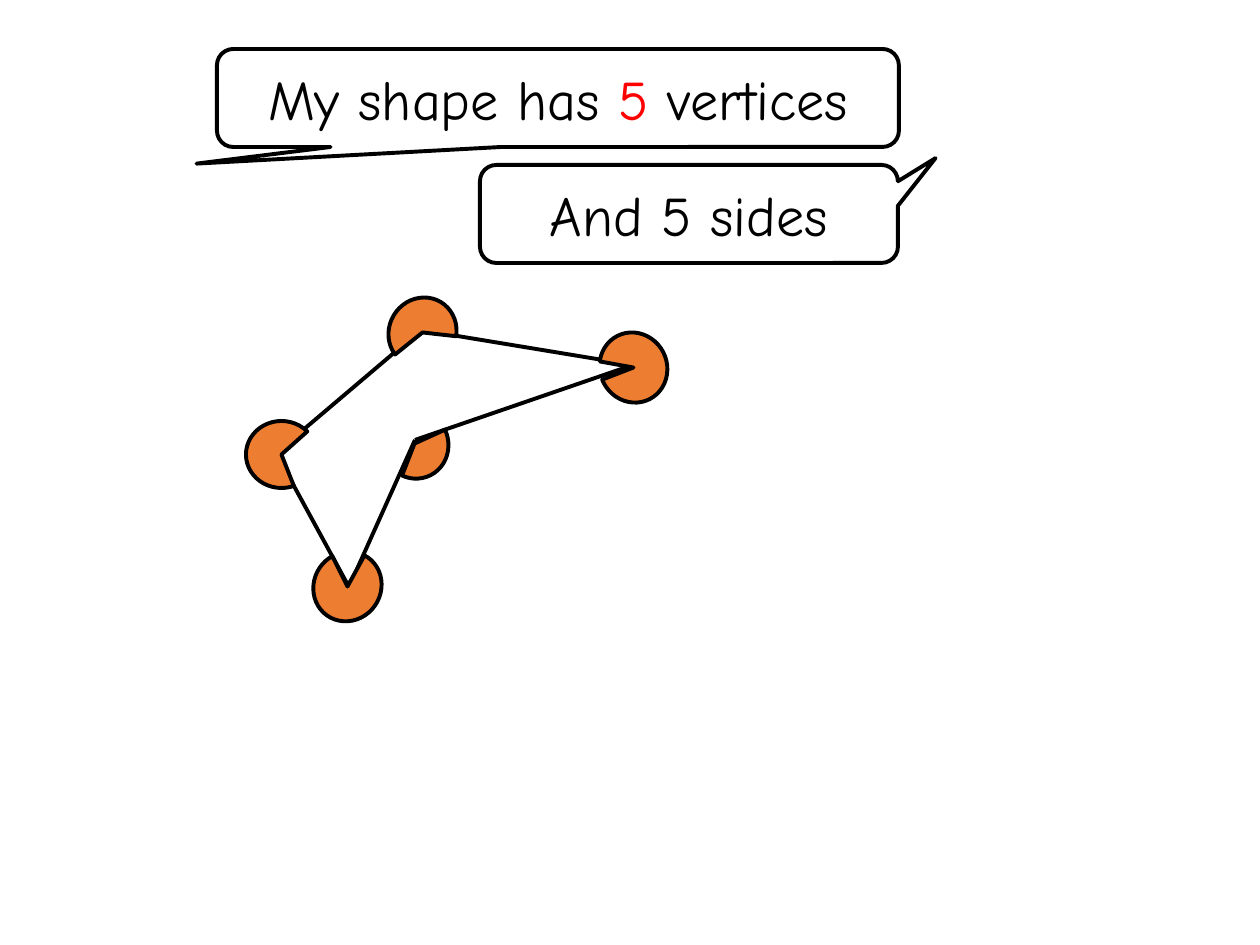
import pptx
import pptx.dml.color
import pptx.enum.shapes
import pptx.enum.text
import pptx.oxml.ns
import pptx.util
from lxml import etree

EMU_PER_PX = 914400 / 126
SHAPES = pptx.enum.shapes.MSO_SHAPE
BLACK, WHITE, RED, ORANGE = "000000", "FFFFFF", "FF0000", "ED7D31"
VERTICES = [(276, 453), (421, 330), (633, 365), (415, 440), (349, 587)]
PIES = [
    (246, 421, 0, (41.11, 190.94)),
    (598, 334, 242.9, (184.44, 165.54)),
    (387, 299, 121.1, (12.06, 147.18)),
    (379, 410, 242.9, (55.61, 137.03)),
    (312, 553, 305.1, (212.2, 179.02)),
]


def px(length):
    """Turn pixels into EMU."""
    return pptx.util.Emu(round(length * EMU_PER_PX))


def color(value):
    """Turn a hex string into a colour."""
    return pptx.dml.color.RGBColor.from_string(value)


def set_line(line):
    """Give a line the black stroke used throughout."""
    line.color.rgb = color(BLACK)
    line.width = pptx.util.Pt(2.25)


def add_side(slide, start, end):
    """Add one straight side of the polygon."""
    side = slide.shapes.add_connector(
        pptx.enum.shapes.MSO_CONNECTOR.STRAIGHT, *map(px, start + end))
    set_line(side.line)
    etree.SubElement(side._element.spPr, pptx.oxml.ns.qn("a:effectLst"))


def add_outlined(slide, kind, box, fill, adjustments):
    """Add a filled preset shape with a black outline."""
    shape = slide.shapes.add_shape(kind, *map(px, box))
    shape.shadow.inherit = False
    shape.fill.solid()
    shape.fill.fore_color.rgb = color(fill)
    set_line(shape.line)
    for index, value in enumerate(adjustments):
        shape.adjustments[index] = value
    return shape


def add_pie(slide, left, top, rotation, angles):
    """Add an orange pie marking the angle at a vertex."""
    pie = add_outlined(slide, SHAPES.PIE, (left, top, 71, 67), ORANGE, angles)
    pie.rotation = rotation


def write_text(shape, runs, size=32, font="Comic Neue"):
    """Write centred runs, each a pair of text and colour."""
    frame = shape.text_frame
    frame.word_wrap = True
    frame.vertical_anchor = pptx.enum.text.MSO_ANCHOR.MIDDLE
    paragraph = frame.paragraphs[0]
    paragraph.alignment = pptx.enum.text.PP_ALIGN.CENTER
    for text, text_color in runs:
        run = paragraph.add_run()
        run.text = text
        run.font.size = pptx.util.Pt(size)
        run.font.name = font
        run.font.color.rgb = color(text_color)


def add_speech(slide, box, tail, runs):
    """Add a rounded speech bubble with its tail tip and text."""
    bubble = add_outlined(slide, SHAPES.ROUNDED_RECTANGULAR_CALLOUT, box, WHITE, tail)
    write_text(bubble, runs)


def main():
    """Build the slide and save it."""
    presentation = pptx.Presentation()
    presentation.slide_width = pptx.util.Inches(10)
    presentation.slide_height = pptx.util.Inches(7.5)
    slide = presentation.slides.add_slide(presentation.slide_layouts[6])
    for start, end in zip(VERTICES, VERTICES[1:] + VERTICES[:1]):
        add_side(slide, start, end)
    for pie in PIES:
        add_pie(slide, *pie)
    add_speech(slide, (217, 49, 682, 98), (-0.53, 0.67),
               [("My shape has ", BLACK), ("5", RED), (" vertices", BLACK)])
    add_speech(slide, (480, 165, 418, 98), (0.59, -0.57),
               [("And 5 sides", BLACK)])
    presentation.save("out.pptx")


if __name__ == "__main__":
    main()
